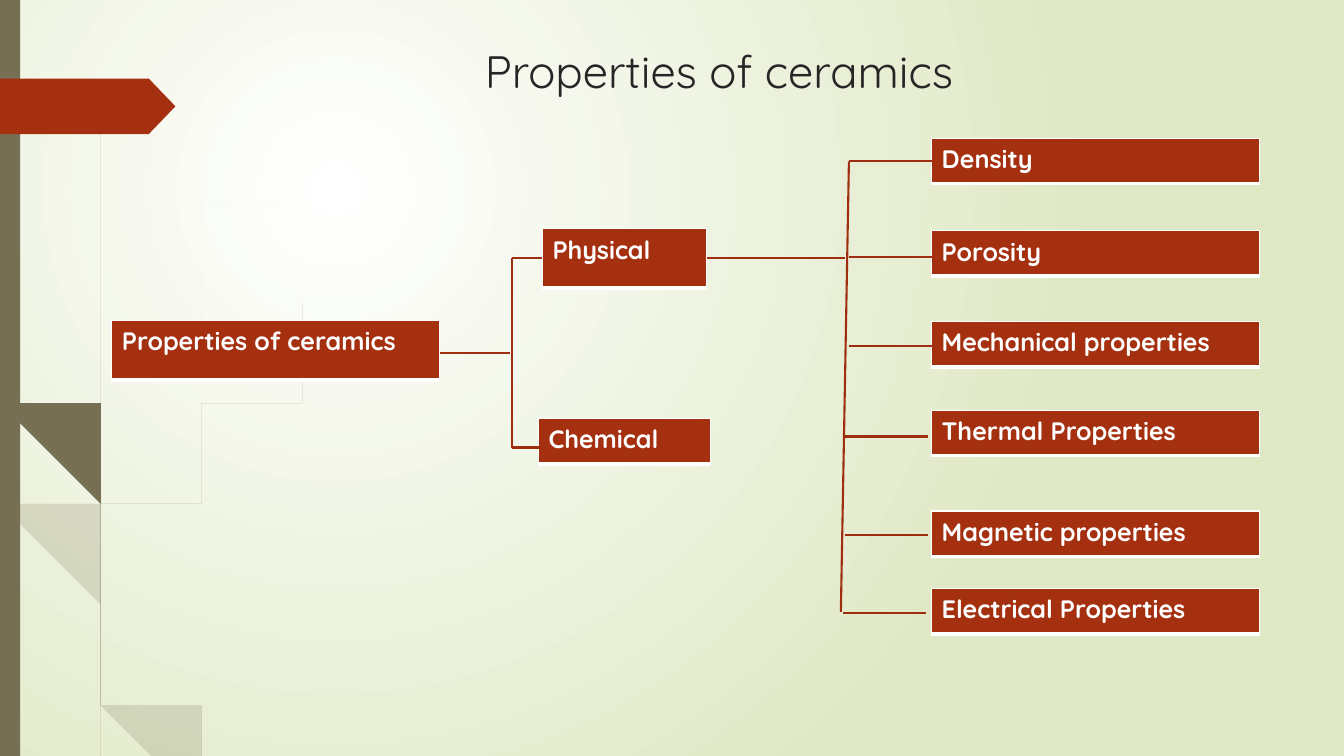
import lxml.etree
import pptx
import pptx.dml.color
import pptx.enum.shapes
import pptx.enum.text
import pptx.oxml
import pptx.oxml.ns
import pptx.util

Inches = pptx.util.Inches
Pt = pptx.util.Pt
qn = pptx.oxml.ns.qn

COLOURS = {
    "glow": "FFFFFF", "meadow": "DFE8C4", "olive": "766F54", "rust": "A53010",
    "branch": "9E2E0F", "title": "262626", "white": "FFFFFF",
}
FONT = "Quicksand"

# Each blade of grass is a pair of edges, both running from tip to root.
FAINT_BLADES = [
    ([(0, 2.82), (0.14, 3.45), (0.62, 5.2), (0.92, 6.07), (1.27, 6.92), (1.55, 7.5)],
     [(0, 2.99), (0.17, 3.76), (0.58, 5.22), (0.88, 6.1), (1.23, 6.94), (1.5, 7.5)]),
    ([(0.11, 3.5), (0.31, 4.69), (0.7, 6.19), (0.93, 6.83), (1.24, 7.5)],
     [(0.11, 3.5), (0.28, 4.7), (0.65, 6.21), (0.92, 6.93), (1.14, 7.5)]),
    ([(3.12, 1.53), (2.68, 1.98), (2.29, 2.45), (1.6, 3.49), (1.1, 4.62),
      (0.88, 5.84), (0.91, 6.46), (1.05, 7.11)],
     [(3.12, 1.53), (2.68, 1.97), (2.28, 2.44), (1.58, 3.48), (1.07, 4.61),
      (0.85, 5.84), (0.87, 6.46), (1.05, 7.11)]),
]
DARK_BLADES = [
    ([(0.04, 0), (0.08, 1.09), (0.19, 2.32), (0.36, 3.55), (0.6, 4.72),
      (0.93, 5.9), (1.13, 6.49), (1.36, 7.06), (1.57, 7.5)],
     [(0.03, 0), (0.07, 1.1), (0.17, 2.33), (0.33, 3.55), (0.56, 4.77),
      (0.88, 5.92), (1.11, 6.56), (1.32, 7.08), (1.52, 7.5)]),
    ([(0.7, 1.41), (0.58, 2.45), (0.54, 3.49), (0.58, 4.53), (0.72, 5.56),
      (0.98, 6.57), (1.22, 7.19), (1.36, 7.5)],
     [(0.7, 1.41), (0.56, 2.45), (0.52, 3.49), (0.55, 4.49), (0.68, 5.57),
      (0.93, 6.59), (1.17, 7.22), (1.27, 7.5)]),
    ([(2.61, 3.44), (2.31, 3.74), (2.05, 4.06), (1.58, 4.76), (1.25, 5.52),
      (1.11, 6.33), (1.22, 7.19)],
     [(2.6, 3.44), (2.31, 3.73), (2.04, 4.05), (1.56, 4.74), (1.22, 5.51),
      (1.06, 6.31), (1.22, 7.19)]),
]

# Name, top of the box, left end and height of its branch.
PHYSICAL_PROPERTIES = [
    ("Density", 1.37, 8.42, 1.6),
    ("Porosity", 2.29, 8.42, 2.55),
    ("Mechanical properties", 3.19, 8.42, 3.43),
    ("Thermal Properties", 4.07, 8.38, 4.33),
    ("Magnetic properties", 5.07, 8.38, 5.31),
    ("Electrical Properties", 5.84, 8.36, 6.08),
]
BRANCH_LENGTH = 0.82


def colour(name):
    return pptx.dml.color.RGBColor.from_string(COLOURS[name])


def write(frame, text, size, colour_name, bold=False):
    span = frame.paragraphs[0].add_run()
    span.text = text
    span.font.name = FONT
    span.font.size = Pt(size)
    span.font.bold = bold
    span.font.color.rgb = colour(colour_name)


def paint(shape, colour_name):
    shape.fill.solid()
    shape.fill.fore_color.rgb = colour(colour_name)
    shape.line.fill.background()
    shape.shadow.inherit = False


def smooth(points, steps=8):
    """Catmull-Rom curve through the points."""
    padded = [points[0], *points, points[-1]]
    curve = []
    for a, b, c, d in zip(padded, padded[1:], padded[2:], padded[3:]):
        for step in range(steps):
            t = step / steps
            curve.append(tuple(
                b[i] + 0.5 * t * (c[i] - a[i]
                + t * (2 * a[i] - 5 * b[i] + 4 * c[i] - d[i]
                + t * (3 * (b[i] - c[i]) + d[i] - a[i])))
                for i in (0, 1)))
    return curve + [points[-1]]


def add_blade(page, edges, opacity):
    right, left = edges
    outline = smooth(right) + smooth(left)[::-1]
    builder = page.shapes.build_freeform(*outline[0], scale=Inches(1))
    builder.add_line_segments(outline[1:], close=True)
    blade = builder.convert_to_shape()
    paint(blade, "olive")
    if opacity < 100:
        tint = blade.element.spPr.find(".//" + qn("a:srgbClr"))
        lxml.etree.SubElement(tint, qn("a:alpha"), val=str(opacity * 1000))


def add_backdrop(page):
    fill = page.background.fill
    fill.gradient()
    for stop, name, position in zip(fill.gradient_stops, ("glow", "meadow"), (0, 1)):
        stop.color.rgb = colour(name)
        stop.position = position
    gradient = page.element.find(".//" + qn("a:gradFill"))
    gradient.remove(gradient.find(qn("a:lin")))
    circle = lxml.etree.SubElement(gradient, qn("a:path"), path="circle")
    lxml.etree.SubElement(circle, qn("a:fillToRect"),
                          l="50000", t="50000", r="100000", b="100000")


def add_left_decoration(page, height):
    for blades, opacity in ((FAINT_BLADES, 20), (DARK_BLADES, 100)):
        for edges in blades:
            add_blade(page, edges, opacity)
    kinds = pptx.enum.shapes.MSO_SHAPE
    strip = page.shapes.add_shape(kinds.RECTANGLE, 0, 0, Inches(0.2), height)
    paint(strip, "olive")
    tag = page.shapes.add_shape(kinds.PENTAGON, 0, Inches(0.78), Inches(1.74), Inches(0.55))
    tag.adjustments[0] = 0.48
    paint(tag, "rust")


def add_title(page, text, left, top, width, height):
    title = page.shapes.title
    title.left, title.top = Inches(left), Inches(top)
    title.width, title.height = Inches(width), Inches(height)
    frame = title.text_frame
    frame.word_wrap = True
    frame.auto_size = pptx.enum.text.MSO_AUTO_SIZE.NONE
    frame.vertical_anchor = pptx.enum.text.MSO_ANCHOR.TOP
    frame.paragraphs[0].alignment = pptx.enum.text.PP_ALIGN.LEFT
    write(frame, text, 32.4, "title")


def add_label(page, text, left, top, width, height):
    """One-cell table with a thicker rule below."""
    table = page.shapes.add_table(
        1, 1, Inches(left), Inches(top), Inches(width), Inches(height)).table
    table.first_row = table.horz_banding = False
    cell = table.cell(0, 0)
    properties = cell._tc.get_or_add_tcPr()
    for side, points in (("L", 1), ("R", 1), ("T", 1), ("B", 3)):
        border = lxml.etree.SubElement(properties, qn("a:ln" + side), w=str(Pt(points)))
        fill = lxml.etree.SubElement(border, qn("a:solidFill"))
        lxml.etree.SubElement(fill, qn("a:srgbClr"), val=COLOURS["white"])
    cell.fill.solid()
    cell.fill.fore_color.rgb = colour("rust")
    write(cell.text_frame, text, 18, "white", bold=True)


def add_line(page, *ends):
    line = page.shapes.add_connector(
        pptx.enum.shapes.MSO_CONNECTOR.STRAIGHT, *map(Inches, ends))
    line.line.color.rgb = colour("branch")
    line.line.width = Pt(1.5)
    lxml.etree.SubElement(line.element.spPr, qn("a:effectLst"))


def add_tree(page):
    add_label(page, "Properties of ceramics", 1.11, 3.18, 3.25, 0.59)
    add_label(page, "Physical", 5.38, 2.27, 1.63, 0.59)
    add_label(page, "Chemical", 5.34, 4.15, 1.71, 0.45)
    for name, top, _, _ in PHYSICAL_PROPERTIES:
        add_label(page, name, 9.24, top, 3.25, 0.45)

    fork, physical, chemical = 5.08, 2.56, 4.44
    for height in (physical, chemical):
        add_line(page, fork, height, 5.38, height)
    add_line(page, fork, physical, fork, chemical)
    add_line(page, 4.36, 3.5, 5.06, 3.5)
    add_line(page, 7.01, physical, 8.38, physical)
    add_line(page, 8.42, 1.6, 8.34, 6.07)
    for _, _, start, height in PHYSICAL_PROPERTIES:
        add_line(page, start, height, start + BRANCH_LENGTH, height)


def main():
    deck = pptx.Presentation()
    deck.slide_width, deck.slide_height = Inches(13.33), Inches(7.5)
    page = deck.slides.add_slide(deck.slide_layouts[5])
    add_backdrop(page)
    add_left_decoration(page, deck.slide_height)
    add_title(page, "Properties of ceramics", 4.71, 0.38, 5.43, 0.59)
    add_tree(page)
    deck.save("out.pptx")


if __name__ == "__main__":
    main()
